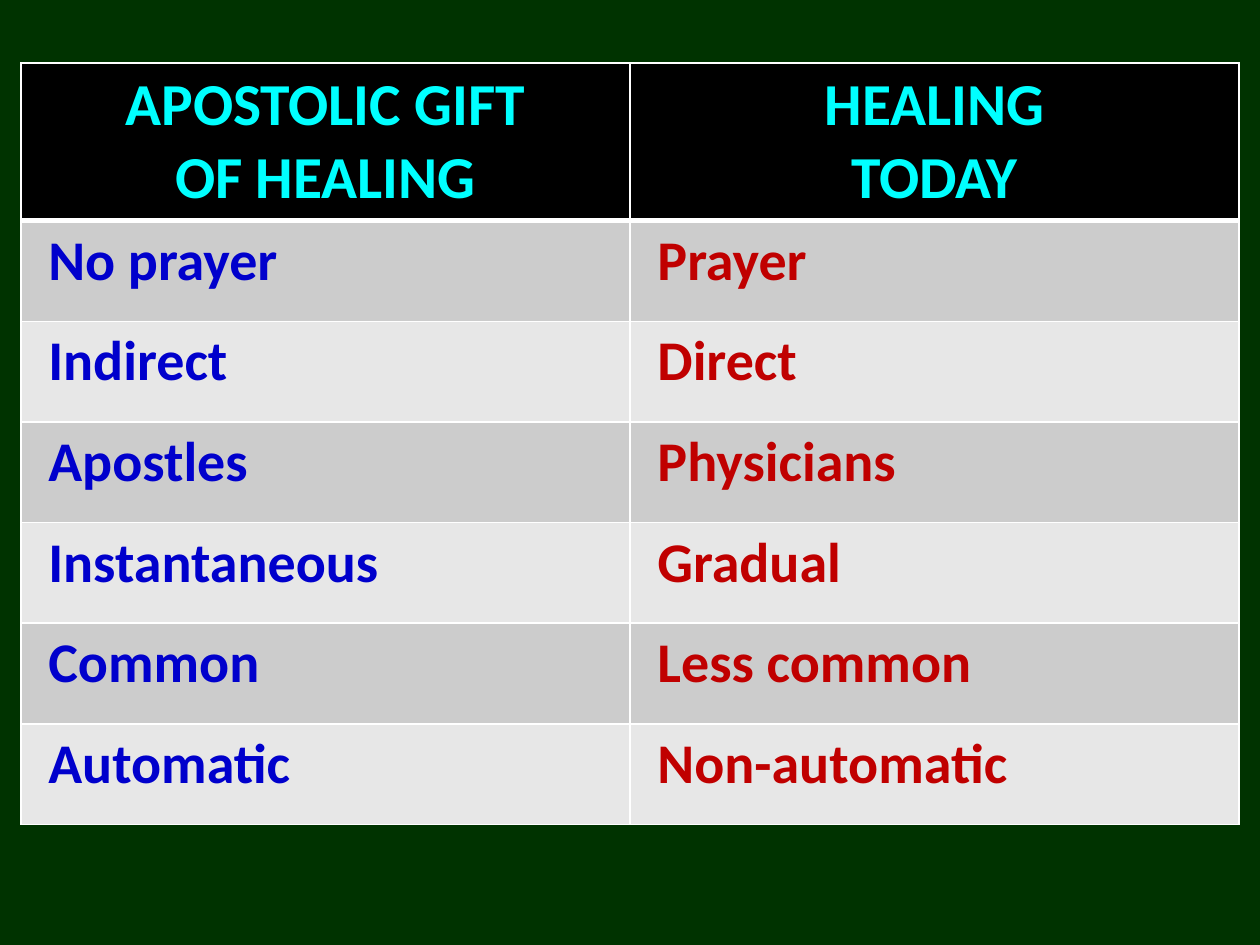
import dataclasses

import lxml.etree
import pptx
import pptx.dml.color
import pptx.enum.text
import pptx.oxml.ns
import pptx.util

Cm = pptx.util.Cm
Pt = pptx.util.Pt
ALIGN = pptx.enum.text.PP_ALIGN

FONT = "Calibri"
WHITE = "FFFFFF"
BANDS = ("CCCCCC", "E7E7E7")
HEAD = ("APOSTOLIC GIFT\nOF HEALING", "HEALING\nTODAY")
PAIRS = (
    ("No prayer", "Prayer"),
    ("Indirect", "Direct"),
    ("Apostles", "Physicians"),
    ("Instantaneous", "Gradual"),
    ("Common", "Less common"),
    ("Automatic", "Non-automatic"),
)


@dataclasses.dataclass
class Style:
    size: int
    ink: str
    fill: str
    align: ALIGN
    indent: float = 0
    top: int = 1
    base: int = 1


def paint(target, color: str) -> None:
    """Give a fill one solid colour."""
    target.solid()
    target.fore_color.rgb = pptx.dml.color.RGBColor.from_string(color)


def edge(cell, side: str, width: int) -> None:
    """Add one white border to a cell."""
    name = pptx.oxml.ns.qn
    props = cell._tc.get_or_add_tcPr()
    line = lxml.etree.SubElement(props, name(f"a:ln{side}"), w=str(Pt(width)))
    solid = lxml.etree.SubElement(line, name("a:solidFill"))
    lxml.etree.SubElement(solid, name("a:srgbClr"), val=WHITE)


def write(cell, text: str, style: Style) -> None:
    """Fill, border and letter one cell."""
    for side, width in zip("LRTB", (1, 1, style.top, style.base)):
        edge(cell, side, width)
    paint(cell.fill, style.fill)
    cell.text_frame.text = text
    for para in cell.text_frame.paragraphs:
        para.alignment = style.align
        if style.indent:
            props = para._p.get_or_add_pPr()
            props.set("marL", str(Cm(style.indent)))
            props.set("indent", "0")
        for run in para.runs:
            run.font.name = FONT
            run.font.size = Pt(style.size)
            run.font.bold = True
            paint(run.font.fill, style.ink)


def main() -> None:
    deck = pptx.Presentation()
    deck.slide_width, deck.slide_height = Cm(25.4), Cm(19.05)
    slide = deck.slides.add_slide(deck.slide_layouts[6])
    paint(slide.background.fill, "003300")

    # Table grid
    tall, step, wide = 3.14, 2.03, 12.28
    count = len(PAIRS)
    frame = slide.shapes.add_table(
        count + 1, 2, Cm(0.42), Cm(1.27), Cm(2 * wide), Cm(tall + count * step)
    )
    table = frame.table
    for col in table.columns:
        col.width = Cm(wide)
    for num, row in enumerate(table.rows):
        row.height = Cm(step if num else tall)

    # Header row
    title = Style(34, "00FFFF", "000000", ALIGN.CENTER, base=3)
    for col, text in enumerate(HEAD):
        write(table.cell(0, col), text, title)

    # Compared pairs, on alternating bands
    for num, pair in enumerate(PAIRS):
        for col, (text, ink) in enumerate(zip(pair, ("0000CC", "C00000"))):
            style = Style(32, ink, BANDS[num % 2], ALIGN.LEFT, 0.3, 1 if num else 3)
            write(table.cell(num + 1, col), text, style)

    deck.save("out.pptx")


if __name__ == "__main__":
    main()
